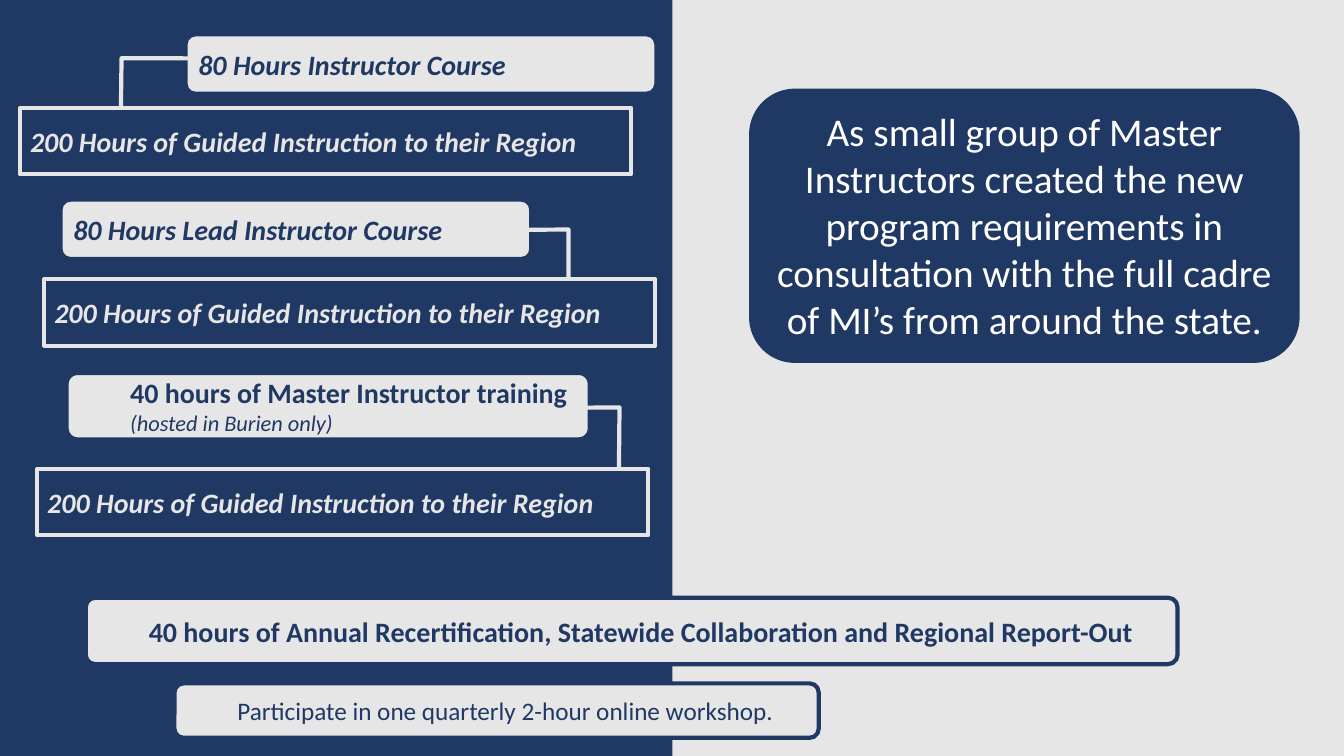
from pptx import Presentation
from pptx.dml.color import RGBColor
from pptx.enum.shapes import MSO_SHAPE as SHAPE
from pptx.enum.text import MSO_ANCHOR as ANCHOR, MSO_AUTO_SIZE as AUTO, PP_ALIGN as ALIGN
from pptx.util import Inches, Pt

NAVY = RGBColor(0x20, 0x38, 0x64)
GREY = RGBColor(0xE7, 0xE6, 0xE6)
WHITE = RGBColor(0xFF, 0xFF, 0xFF)

BOLD = {"size": Pt(20), "bold": True}
BOLD_ITALIC = {**BOLD, "italic": True}
HOSTED_NOTE = {"size": Pt(16), "italic": True}
WORKSHOP = {"size": Pt(18)}
STATEMENT = {"size": Pt(28)}

# Course boxes: place, text, indent level, font format
COURSES = [
    ((1.84, 0.34, 4.67, 0.59), "80 Hours Instructor Course", 0, BOLD_ITALIC),
    ((0.6, 1.98, 4.67, 0.59), "80 Hours Lead Instructor Course", 0, BOLD_ITALIC),
    ((0.66, 3.7, 5.19, 0.66), "40 hours of Master Instructor training ", 1, BOLD),
]
# Callouts below the courses: left, top, pointer adjustments
CALLOUTS = [
    (0.2, 1.07, (-0.003, 0.165, -0.747, 0.166, -0.744, 0.28)),
    (0.44, 2.77, (-0.018, 0.858, -0.747, 0.858, -0.744, 0.792)),
    (0.37, 4.65, (-0.018, 0.952, -0.921, 0.953, -0.918, 0.9)),
]


def add_box(s, kind, place, fill, line=None, adjustments=()):
    sp = s.shapes.add_shape(kind, *map(Inches, place))
    sp.shadow.inherit = False
    sp.fill.solid()
    sp.fill.fore_color.rgb = fill
    if line is None:
        sp.line.fill.background()
    else:
        sp.line.color.rgb = line
        sp.line.width = Pt(3)
    for i, value in enumerate(adjustments):
        sp.adjustments[i] = value
    return sp


def add_run(p, text, color, font_format):
    r = p.add_run()
    r.text = text
    r.font.name = "Calibri"
    r.font.color.rgb = color
    for name, value in font_format.items():
        setattr(r.font, name, value)


def write(sp, text, color, font_format, level=0, align=ALIGN.LEFT):
    tf = sp.text_frame
    tf.word_wrap = True
    tf.vertical_anchor = ANCHOR.MIDDLE
    p = tf.paragraphs[0]
    p.alignment = align
    p.level = level
    add_run(p, text, color, font_format)
    return p


def add_rounded(s, place, text, level, font_format, adjustments=()):
    sp = add_box(s, SHAPE.ROUNDED_RECTANGLE, place, GREY, NAVY, adjustments)
    return write(sp, text, NAVY, font_format, level)


def add_callout(s, left, top, adjustments):
    sp = add_box(s, SHAPE.LINE_CALLOUT_2, (left, top, 6.06, 0.66), NAVY, GREY, adjustments)
    write(sp, "200 Hours of Guided Instruction to their Region", GREY, BOLD_ITALIC)


def add_statement(s):
    sp = add_box(s, SHAPE.ROUNDED_RECTANGLE, (7.43, 0.88, 5.46, 2.72), NAVY)
    write(sp, "As small group of Master Instructors created the new program "
              "requirements in consultation with the full cadre of MI’s from "
              "around the state.", WHITE, STATEMENT, align=ALIGN.CENTER)
    sp.text_frame.vertical_anchor = ANCHOR.TOP
    sp.text_frame.auto_size = AUTO.SHAPE_TO_FIT_TEXT


def main():
    prs = Presentation()
    prs.slide_width, prs.slide_height = Inches(13.33), Inches(7.5)
    s = prs.slides.add_slide(prs.slide_layouts[6])

    # Background and left panel
    s.background.fill.solid()
    s.background.fill.fore_color.rgb = GREY
    add_box(s, SHAPE.RECTANGLE, (0, 0, 6.67, 7.5), NAVY)

    # Courses, each followed by its guided instruction
    for course, callout in zip(COURSES, CALLOUTS):
        p = add_rounded(s, *course)
        add_callout(s, *callout)
    p.add_line_break()
    add_run(p, "(hosted in Burien only)", NAVY, HOSTED_NOTE)

    # Statement on the right
    add_statement(s)

    # Yearly requirements along the bottom
    add_rounded(s, (0.85, 5.93, 10.83, 0.66),
                "40 hours of Annual Recertification, Statewide Collaboration "
                "and Regional Report-Out", 1, BOLD, (0.144,))
    add_rounded(s, (1.73, 6.78, 6.39, 0.54),
                "Participate in one quarterly 2-hour online workshop.", 1, WORKSHOP)

    prs.save("out.pptx")


if __name__ == "__main__":
    main()
